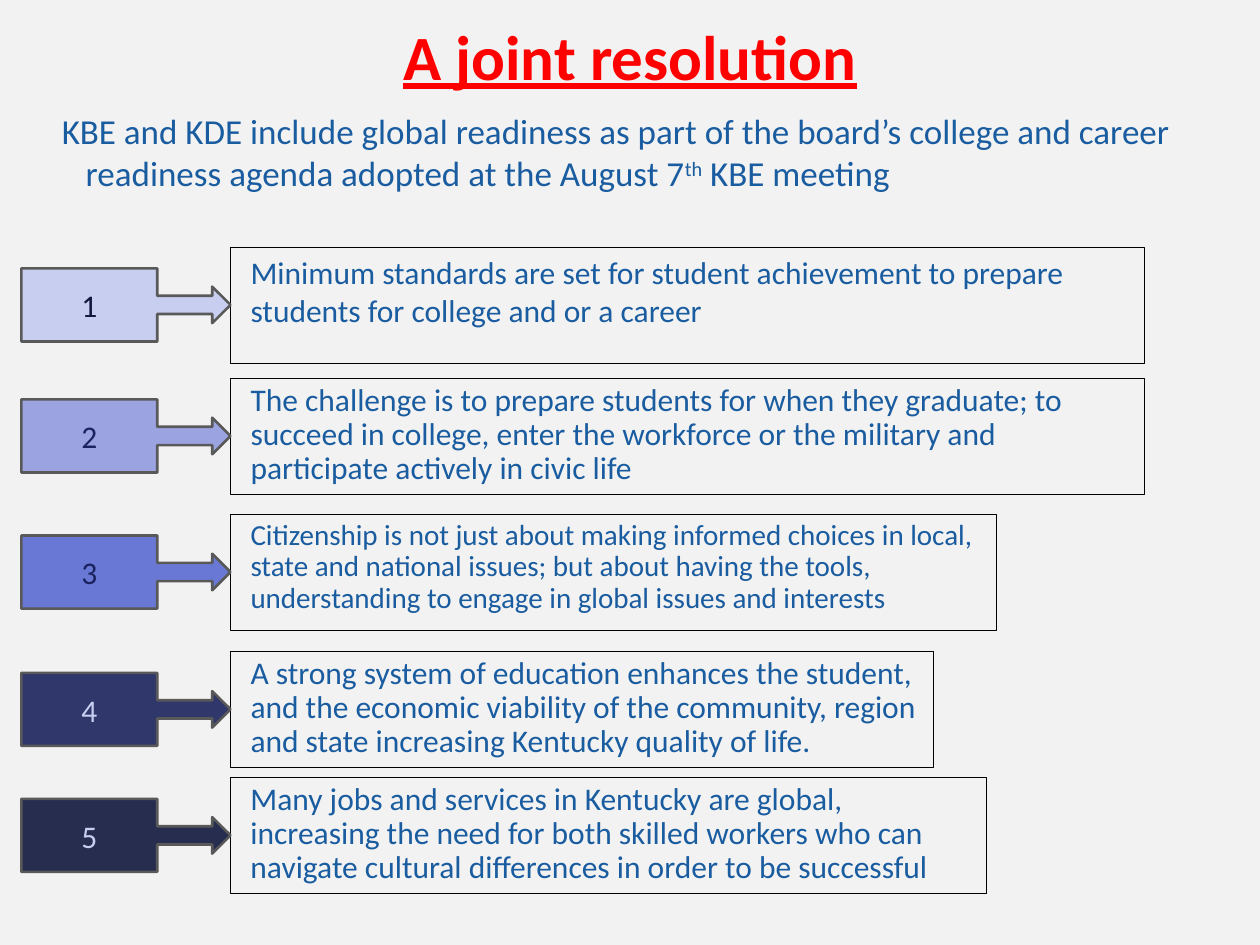
from pptx import Presentation
from pptx.dml.color import RGBColor
from pptx.enum.shapes import MSO_SHAPE
from pptx.enum.text import MSO_ANCHOR, MSO_AUTO_SIZE, PP_ALIGN
from pptx.oxml.ns import qn
from pptx.util import Inches, Pt
from lxml import etree

BACKGROUND = RGBColor(0xF2, 0xF2, 0xF2)
RED = RGBColor(0xFF, 0x00, 0x00)
BLUE = RGBColor(0x1A, 0x5C, 0xA0)
BLACK = RGBColor(0x00, 0x00, 0x00)
GREY = RGBColor(0x59, 0x59, 0x59)
PALE = RGBColor(0xC8, 0xCE, 0xF0)
LIGHT = RGBColor(0x92, 0x9C, 0xE0)
MEDIUM = RGBColor(0x5B, 0x6B, 0xD1)
DARK = RGBColor(0x1A, 0x23, 0x5D)
DARKEST = RGBColor(0x11, 0x18, 0x3E)

FONT = "Calibri"
BOX_LEFT, BOX_HEIGHT = 1.83, 0.92
CALLOUT_LEFT, CALLOUT_HEIGHT = 0.17, 0.58

# top, box width, text size, line spacing, callout fill, opacity, number colour, text
POINTS = [
    (1.96, 7.25, 18, 1.0, PALE, 100, DARKEST,
     "Minimum standards are set for student achievement to prepare students "
     "for college and or a career"),
    (3.0, 7.25, 18, 0.9, LIGHT, 90, DARK,
     "The challenge is to prepare students for when they graduate; to succeed "
     "in college, enter the workforce or the military and participate actively "
     "in civic life"),
    (4.08, 6.08, 16.6, 0.9, MEDIUM, 90, DARK,
     "Citizenship is not just about making informed choices in local, state and "
     "national issues; but about having the tools, understanding to engage in "
     "global issues and interests"),
    (5.17, 5.58, 18, 0.9, DARK, 90, PALE,
     "A strong system of education enhances the student, and the economic "
     "viability of the community, region and state increasing Kentucky quality "
     "of life."),
    (6.17, 6.0, 18, 0.9, DARKEST, 90, PALE,
     "Many jobs and services in Kentucky are global, increasing the need for "
     "both skilled workers who can navigate cultural differences in order to "
     "be successful"),
]


def place(sp, left, top, width, height):
    sp.left, sp.top = Inches(left), Inches(top)
    sp.width, sp.height = Inches(width), Inches(height)


def write(sp, *texts, size, color, bold=None, underline=None,
          align=PP_ALIGN.LEFT, anchor=MSO_ANCHOR.TOP, spacing=1.0,
          margin=0, indent=0):
    """Write the texts as the runs of one formatted paragraph; return the runs."""
    tf = sp.text_frame
    tf.word_wrap = True
    tf.auto_size = MSO_AUTO_SIZE.NONE
    tf.vertical_anchor = anchor
    p = tf.paragraphs[0]
    p.alignment = align
    p.line_spacing = spacing
    p.space_before = Pt(0)
    pPr = p._p.get_or_add_pPr()
    pPr.set("marL", str(Inches(margin)))
    pPr.set("indent", str(Inches(indent)))
    etree.SubElement(pPr, qn("a:buNone"))
    runs = []
    for text in texts:
        r = p.add_run()
        r.text = text
        r.font.name, r.font.size = FONT, Pt(size)
        r.font.bold, r.font.underline = bold, underline
        r.font.color.rgb = color
        runs.append(r)
    return runs


def add_heading(s):
    # Title
    title = s.shapes.title
    place(title, 0, 0, 10, 0.87)
    write(title, "A joint resolution", size=36, color=RED, bold=True,
          underline=True, align=PP_ALIGN.CENTER, anchor=MSO_ANCHOR.MIDDLE)

    # Introduction
    body = s.placeholders[1]
    place(body, 0.39, 0.82, 9.02, 0.77)
    runs = write(body,
                 "KBE and KDE include global readiness as part of the board’s "
                 "college and career readiness agenda adopted at the August 7",
                 "th", " KBE meeting",
                 size=20, color=BLUE, margin=0.19, indent=-0.19)
    runs[1].font._element.set("baseline", "30000")


def add_callout(s, number, top, fill, opacity, color):
    sp = s.shapes.add_shape(
        MSO_SHAPE.RIGHT_ARROW_CALLOUT, Inches(CALLOUT_LEFT), Inches(top),
        Inches(BOX_LEFT - CALLOUT_LEFT), Inches(CALLOUT_HEIGHT))
    sp.shadow.inherit = False
    sp.fill.solid()
    sp.fill.fore_color.rgb = fill
    if opacity < 100:
        clr = sp._element.spPr.find(qn("a:solidFill"))[0]
        etree.SubElement(clr, qn("a:alpha"), val=str(opacity * 1000))
    sp.line.color.rgb = GREY
    sp.line.width = Pt(1.5)
    write(sp, str(number), size=18, color=color,
          align=PP_ALIGN.CENTER, anchor=MSO_ANCHOR.MIDDLE)


def add_point(s, number, top, width, size, spacing, fill, opacity, color, text):
    # Outlined statement
    box = s.shapes.add_textbox(Inches(BOX_LEFT), Inches(top),
                               Inches(width), Inches(BOX_HEIGHT))
    box.line.color.rgb = BLACK
    box.line.width = Pt(0.25)
    write(box, text, size=size, color=BLUE, spacing=spacing, margin=0.06)

    # Numbered arrow, centred on the statement
    add_callout(s, number, top + (BOX_HEIGHT - CALLOUT_HEIGHT) / 2,
                fill, opacity, color)


def main():
    prs = Presentation()
    prs.slide_width, prs.slide_height = Inches(10), Inches(7.5)
    s = prs.slides.add_slide(prs.slide_layouts[1])
    s.background.fill.solid()
    s.background.fill.fore_color.rgb = BACKGROUND
    add_heading(s)
    for number, point in enumerate(POINTS, 1):
        add_point(s, number, *point)
    prs.save("out.pptx")


if __name__ == "__main__":
    main()
